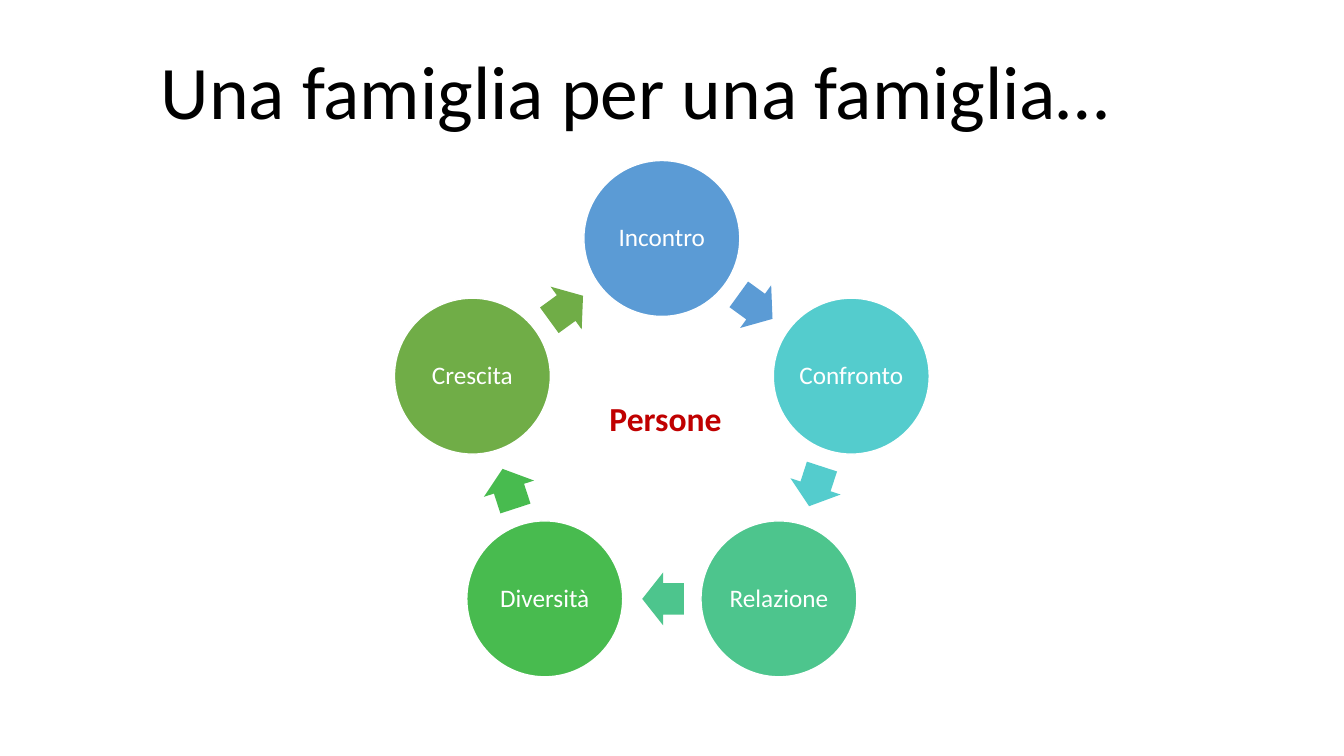
from dataclasses import dataclass
from math import cos, radians, sin

from pptx import Presentation
from pptx.dml.color import RGBColor
from pptx.enum.shapes import MSO_SHAPE
from pptx.enum.text import MSO_ANCHOR, MSO_AUTO_SIZE, PP_ALIGN
from pptx.shapes.autoshape import Shape
from pptx.slide import Slide
from pptx.text.text import TextFrame
from pptx.util import Cm, Pt

OVAL, ARROW = MSO_SHAPE.OVAL, MSO_SHAPE.RIGHT_ARROW
MIDDLE, BOTTOM = MSO_ANCHOR.MIDDLE, MSO_ANCHOR.BOTTOM
LEFT, CENTER = PP_ALIGN.LEFT, PP_ALIGN.CENTER
NO_FIT = MSO_AUTO_SIZE.NONE


@dataclass(frozen=True)
class Theme:
    font: str = "Calibri"
    black: str = "000000"
    white: str = "FFFFFF"
    red: str = "C00000"
    title: int = 54
    focus: int = 24
    label: int = 18


@dataclass(frozen=True)
class Step:
    label: str
    color: str


THEME = Theme()
STEPS = [
    Step("Incontro", "5B9BD5"),
    Step("Confronto", "54CCCD"),
    Step("Relazione", "4DC58D"),
    Step("Diversità", "48BB4F"),
    Step("Crescita", "70AD47"),
]

# Ring measures in centimetres
MID_X, MID_Y, RADIUS = 16.68, 11.03, 5.02
DISC = 3.93
ARROW_W, ARROW_H = 1.05, 1.33
BACK = 0.03  # arrows sit slightly behind the middle of each gap
TURN = 360 / len(STEPS)


def write(frame: TextFrame, text: str, size: int, color: str,
          align: PP_ALIGN = CENTER, bold: bool = False,
          spacing: float = 0.9) -> None:
    para = frame.paragraphs[0]
    para.alignment = align
    para.line_spacing = spacing
    run = para.add_run()
    run.text = text
    font = run.font
    font.name, font.size, font.bold = THEME.font, Pt(size), bold
    font.color.rgb = RGBColor.from_string(color)


def add_part(slide: Slide, kind: MSO_SHAPE, x: float, y: float,
             width: float, height: float, color: str) -> Shape:
    """Add a plain filled shape centred on x, y."""
    part = slide.shapes.add_shape(kind, Cm(x - width / 2), Cm(y - height / 2),
                                  Cm(width), Cm(height))
    part.shadow.inherit = False
    part.fill.solid()
    part.fill.fore_color.rgb = RGBColor.from_string(color)
    part.line.fill.background()
    return part


def add_disc(slide: Slide, step: Step, angle: float) -> None:
    turn = radians(angle)
    disc = add_part(slide, OVAL, MID_X + RADIUS * sin(turn),
                    MID_Y - RADIUS * cos(turn), DISC, DISC, step.color)
    disc.line.color.rgb = RGBColor.from_string(THEME.white)
    disc.line.width = Pt(1)
    frame = disc.text_frame
    frame.word_wrap = True
    frame.vertical_anchor = MIDDLE
    frame.margin_left = frame.margin_right = Cm(0.08)
    frame.margin_top = frame.margin_bottom = Cm(0.08)
    write(frame, step.label, THEME.label, THEME.white)


def add_arrow(slide: Slide, step: Step, angle: float) -> None:
    """Point clockwise along the ring from the gap at this angle."""
    turn = radians(angle)
    reach = RADIUS * cos(radians(TURN / 2))
    x = MID_X + reach * sin(turn) - BACK * cos(turn)
    y = MID_Y - reach * cos(turn) - BACK * sin(turn)
    arrow = add_part(slide, ARROW, x, y, ARROW_W, ARROW_H, step.color)
    arrow.adjustments[0], arrow.adjustments[1] = 0.6, 0.5
    arrow.rotation = angle


def add_title(slide: Slide) -> None:
    title = slide.shapes.title
    title.left, title.top = Cm(3.3), Cm(1.47)
    title.width, title.height = Cm(25.4), Cm(2.08)
    frame = title.text_frame
    frame.word_wrap = True
    frame.auto_size = NO_FIT
    frame.vertical_anchor = BOTTOM
    write(frame, "Una famiglia per una famiglia…", THEME.title, THEME.black)


def add_focus(slide: Slide) -> None:
    box = slide.shapes.add_textbox(Cm(15.11), Cm(9.91), Cm(3.66), Cm(1.27))
    box.text_frame.word_wrap = True
    write(box.text_frame, "Persone", THEME.focus, THEME.red,
          align=LEFT, bold=True, spacing=1.0)


def main() -> None:
    deck = Presentation()
    deck.slide_width, deck.slide_height = Cm(33.87), Cm(19.05)
    slide = deck.slides.add_slide(deck.slide_layouts[5])
    add_title(slide)
    for index, step in enumerate(STEPS):
        add_disc(slide, step, index * TURN)
        add_arrow(slide, step, (index + 0.5) * TURN)
    add_focus(slide)
    deck.save("out.pptx")


if __name__ == "__main__":
    main()
